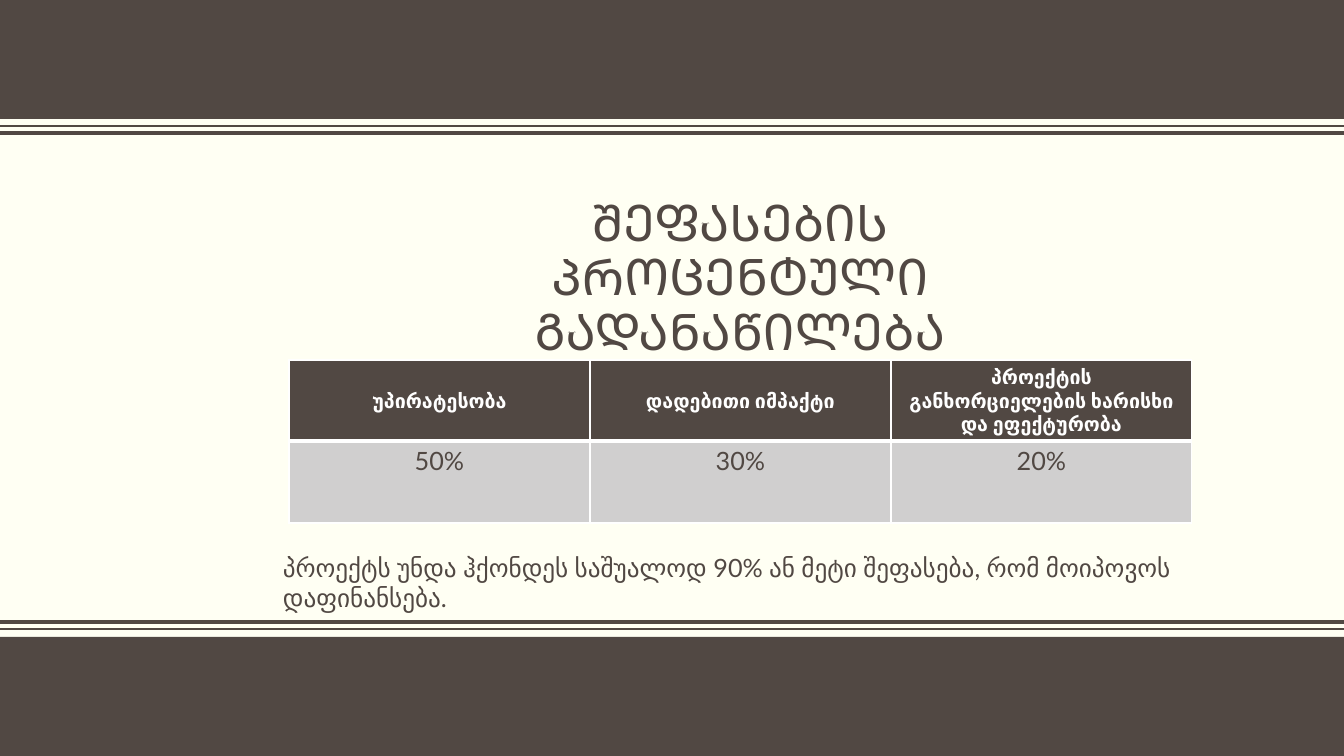
from dataclasses import dataclass

from lxml.etree import SubElement
from pptx import Presentation
from pptx.dml.color import RGBColor
from pptx.enum.shapes import MSO_CONNECTOR, MSO_SHAPE
from pptx.enum.text import MSO_ANCHOR, MSO_AUTO_SIZE, PP_ALIGN
from pptx.oxml import parse_xml
from pptx.oxml.ns import nsdecls, qn
from pptx.slide import Slide
from pptx.table import _Cell
from pptx.util import Emu, Pt

PAGE_WIDTH, PAGE_HEIGHT = 1344, 756
EMU_PER_PX = 12192000 / PAGE_WIDTH
COLOURS = {"paper": "FFFFF3", "brown": "514843", "white": "FFFFFF", "grey": "D0CFCF"}


@dataclass
class Rule:
    y: int
    weight: int


@dataclass
class RowStyle:
    texts: list[str]
    height: int
    fill: str
    colour: str
    size: int
    bold: bool
    anchor: MSO_ANCHOR
    top: int
    bottom: int


BAND_HEIGHT = 119
BAND_TOPS = [0, PAGE_HEIGHT - BAND_HEIGHT]
RULES = [Rule(133, 3), Rule(126, 1), Rule(622, 3), Rule(629, 1)]
COLUMN_WIDTH = 301
ROWS = [
    RowStyle(
        ["უპირატესობა", "დადებითი იმპაქტი", "პროექტის განხორციელების ხარისხი და ეფექტურობა"],
        81, "brown", "white", 14, True, MSO_ANCHOR.MIDDLE, 1, 3,
    ),
    RowStyle(["50%", "30%", "20%"], 82, "grey", "brown", 18, False, MSO_ANCHOR.TOP, 3, 1),
]


def px(length: int) -> Emu:
    return Emu(round(length * EMU_PER_PX))


def colour(name: str) -> RGBColor:
    return RGBColor.from_string(COLOURS[name])


def set_font(para, name: str, size: int, colour_name: str, bold: bool = False) -> None:
    para.font.name = name
    para.font.size = Pt(size)
    para.font.bold = bold
    para.font.color.rgb = colour(colour_name)


def draw_band(page: Slide, top: int) -> None:
    band = page.shapes.add_shape(
        MSO_SHAPE.RECTANGLE, 0, px(top), px(PAGE_WIDTH), px(BAND_HEIGHT))
    band.shadow.inherit = False
    band.fill.solid()
    band.fill.fore_color.rgb = colour("brown")
    band.line.fill.background()


def draw_rule(page: Slide, rule: Rule) -> None:
    line = page.shapes.add_connector(
        MSO_CONNECTOR.STRAIGHT, 0, px(rule.y), px(PAGE_WIDTH), px(rule.y))
    line.line.color.rgb = colour("brown")
    line.line.width = Pt(rule.weight)
    SubElement(line._element.spPr, qn("a:effectLst"))


def set_borders(cell: _Cell, top: int, bottom: int) -> None:
    properties = cell._tc.get_or_add_tcPr()
    weights = {"lnL": 1, "lnR": 1, "lnT": top, "lnB": bottom}
    for index, (tag, weight) in enumerate(weights.items()):
        properties.insert(index, parse_xml(
            f'<a:{tag} {nsdecls("a")} w="{Pt(weight)}"><a:solidFill>'
            f'<a:srgbClr val="{COLOURS["white"]}"/></a:solidFill></a:{tag}>'))


def fill_cell(cell: _Cell, text: str, style: RowStyle) -> None:
    cell.text = text
    cell.vertical_anchor = style.anchor
    cell.fill.solid()
    cell.fill.fore_color.rgb = colour(style.fill)
    para = cell.text_frame.paragraphs[0]
    para.alignment = PP_ALIGN.CENTER
    set_font(para, "Lato", style.size, style.colour, style.bold)
    set_borders(cell, style.top, style.bottom)


def draw_title(page: Slide) -> None:
    title = page.shapes.title
    title.left, title.top, title.width, title.height = px(424), px(157), px(632), px(245)
    frame = title.text_frame
    frame.text = "ᲨᲔᲤᲐᲡᲔᲑᲘᲡ ᲞᲠᲝᲪᲔᲜᲢᲣᲚᲘ ᲒᲐᲓᲐᲜᲐᲬᲘᲚᲔᲑᲐ"
    frame.word_wrap = True
    frame.auto_size = MSO_AUTO_SIZE.NONE
    frame.vertical_anchor = MSO_ANCHOR.MIDDLE
    frame.margin_left = frame.margin_right = 0
    para = frame.paragraphs[0]
    para.alignment = PP_ALIGN.CENTER
    para.line_spacing = 0.9
    set_font(para, "Arial", 36, "brown")


def draw_table(page: Slide) -> None:
    column_count = len(ROWS[0].texts)
    table = page.shapes.add_table(
        len(ROWS), column_count, px(289), px(360),
        px(COLUMN_WIDTH * column_count), px(sum(style.height for style in ROWS))).table
    for column in table.columns:
        column.width = px(COLUMN_WIDTH)
    for row, style in zip(table.rows, ROWS):
        row.height = px(style.height)
        for cell, text in zip(row.cells, style.texts):
            fill_cell(cell, text, style)


def draw_note(page: Slide) -> None:
    box = page.shapes.add_textbox(px(273), px(547), px(977), px(72))
    frame = box.text_frame
    frame.word_wrap = True
    frame.text = "პროექტს უნდა ჰქონდეს საშუალოდ 90% ან მეტი შეფასება, რომ მოიპოვოს დაფინანსება."
    set_font(frame.paragraphs[0], "Lato", 18, "brown")


def main() -> None:
    deck = Presentation()
    deck.slide_width, deck.slide_height = px(PAGE_WIDTH), px(PAGE_HEIGHT)
    page = deck.slides.add_slide(deck.slide_layouts.get_by_name("Title Only"))
    page.background.fill.solid()
    page.background.fill.fore_color.rgb = colour("paper")

    # Bands and rules at the top and bottom
    for top in BAND_TOPS:
        draw_band(page, top)
    for rule in RULES:
        draw_rule(page, rule)

    # Content
    draw_title(page)
    draw_table(page)
    draw_note(page)
    deck.save("out.pptx")


if __name__ == "__main__":
    main()
